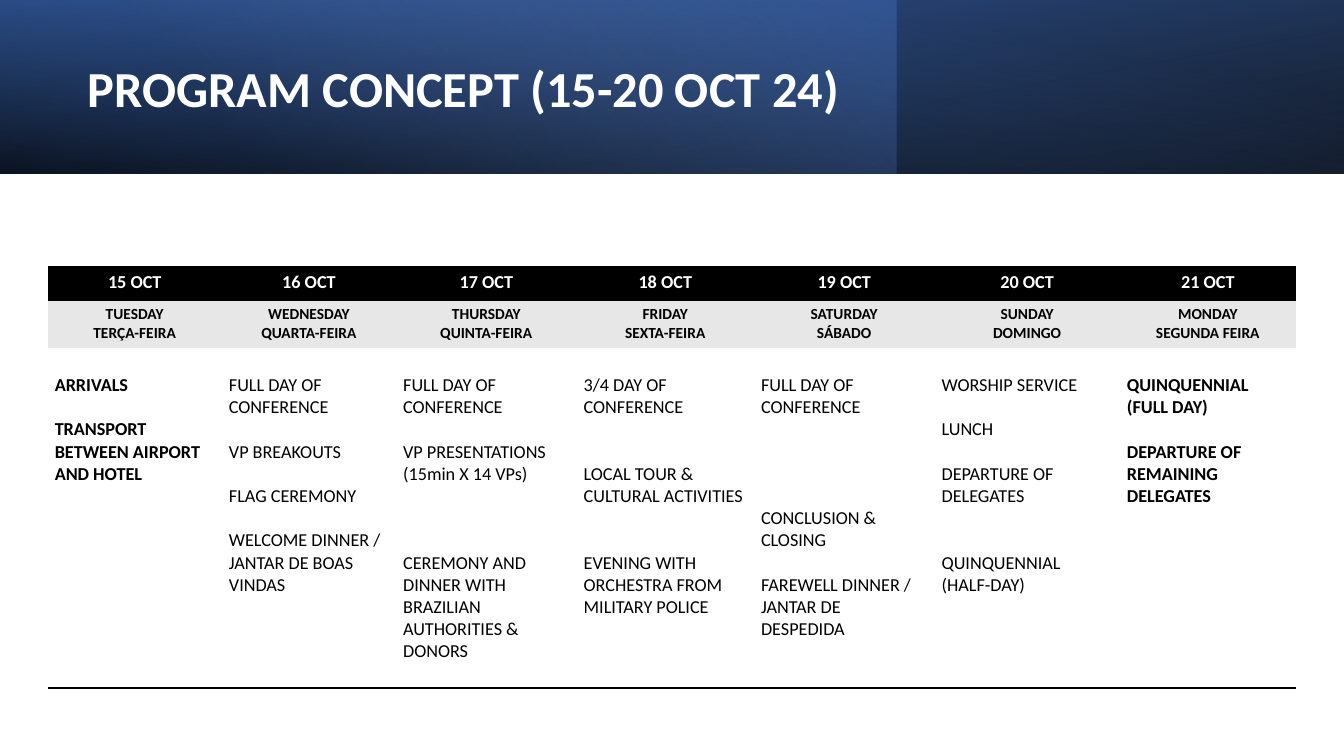
"""Builds the conference program slide: a gradient banner over a day-by-day table."""
import pptx
import pptx.dml.color
import pptx.enum.shapes
import pptx.enum.text
import pptx.oxml.ns
import pptx.util
from lxml import etree

Cm, Pt = pptx.util.Cm, pptx.util.Pt
qn = pptx.oxml.ns.qn
CENTER = pptx.enum.text.PP_ALIGN.CENTER

TITLE = "PROGRAM CONCEPT (15-20 OCT 24)"
FONT = "Calibri"
WIDE, TALL, BAND = 33.87, 19.05, 4.37

# width, angle, turn, flip, stops as (position, colour, opacity)
LAYERS = [
    (WIDE, 100, 180, True, [(0, "000000", 96), (100, "2F5597", 100)]),
    (22.58, 140, 0, False, [(0, "4472C4", 41), (74, "8FAADC", 0)]),
    (WIDE, 260, 0, True, [(0, "000000", 63), (78, "4472C4", 15)]),
]

# width, date, day names, bold, events as (blank lines above, text)
DAYS = [
    (4.39, "15 OCT", "TUESDAY\nTERÇA-FEIRA", True,
     [(0, "ARRIVALS"), (1, "TRANSPORT BETWEEN AIRPORT AND HOTEL")]),
    (4.39, "16 OCT", "WEDNESDAY\nQUARTA-FEIRA", False,
     [(0, "FULL DAY OF CONFERENCE"), (1, "VP BREAKOUTS"), (1, "FLAG CEREMONY"),
      (1, "WELCOME DINNER / JANTAR DE BOAS VINDAS")]),
    (4.55, "17 OCT", "THURSDAY\nQUINTA-FEIRA", False,
     [(0, "FULL DAY OF CONFERENCE"), (1, "VP PRESENTATIONS"), (0, "(15min X 14 VPs)"),
      (3, "CEREMONY AND DINNER WITH BRAZILIAN AUTHORITIES & DONORS")]),
    (4.47, "18 OCT", "FRIDAY\nSEXTA-FEIRA", False,
     [(0, "3/4 DAY OF CONFERENCE"), (2, "LOCAL TOUR & CULTURAL ACTIVITIES"),
      (2, "EVENING WITH ORCHESTRA FROM MILITARY POLICE")]),
    (4.55, "19 OCT", "SATURDAY\nSÁBADO", False,
     [(0, "FULL DAY OF CONFERENCE"), (4, "CONCLUSION & CLOSING"),
      (1, "FAREWELL DINNER / JANTAR DE DESPEDIDA")]),
    (4.67, "20 OCT", "SUNDAY\nDOMINGO", False,
     [(0, "WORSHIP SERVICE"), (1, "LUNCH"), (1, "DEPARTURE OF DELEGATES"),
      (2, "QUINQUENNIAL"), (0, "(HALF-DAY)")]),
    (4.44, "21 OCT", "MONDAY\nSEGUNDA FEIRA", True,
     [(0, "QUINQUENNIAL"), (0, "(FULL DAY)"), (1, "DEPARTURE OF REMAINING DELEGATES")]),
]
ROWS = [0.85, 1.19, 8.56]
LEFT, TOP = 1.2, 6.73
LINE = 15.87
PLAIN = "{2D5ABB26-0587-4C30-8999-92F81FD0307C}"


def rgb(code):
    return pptx.dml.color.RGBColor.from_string(code)


def node(parent, tag, **attrs):
    return etree.SubElement(parent, qn(tag), {k: str(v) for k, v in attrs.items()})


def style(frame, size, color, bold):
    for para in frame.paragraphs:
        for run in para.runs:
            run.font.name, run.font.size, run.font.bold = FONT, Pt(size), bold
            run.font.color.rgb = rgb(color)


def add_layer(slide, width, angle, turn, flip, stops):
    rect = slide.shapes.add_shape(
        pptx.enum.shapes.MSO_SHAPE.RECTANGLE, 0, 0, Cm(width), Cm(BAND))
    rect.shadow.inherit = False
    rect.line.fill.background()
    rect.rotation = turn
    props = rect._element.spPr
    if flip:
        props.find(qn("a:xfrm")).set("flipH", "1")
    grad = node(props, "a:gradFill", rotWithShape=1)
    props.find(qn("a:prstGeom")).addnext(grad)
    steps = node(grad, "a:gsLst")
    for pos, color, alpha in stops:
        tint = node(node(steps, "a:gs", pos=pos * 1000), "a:srgbClr", val=color)
        node(tint, "a:alpha", val=alpha * 1000)
    node(grad, "a:lin", ang=angle * 60000, scaled=0)


def add_title(slide):
    box = slide.shapes.add_textbox(Cm(1.96), Cm(0.69), Cm(19.61), Cm(3.23))
    frame = box.text_frame
    frame.word_wrap = True
    frame.vertical_anchor = pptx.enum.text.MSO_ANCHOR.MIDDLE
    frame.text = TITLE
    frame.paragraphs[0].line_spacing = 0.9
    style(frame, 36, "FFFFFF", True)


def fill_cell(cell, text, size, color, bold, back):
    cell.margin_left = cell.margin_right = Cm(0.18)
    cell.margin_top = cell.margin_bottom = Cm(0.1)
    cell.fill.solid()
    cell.fill.fore_color.rgb = rgb(back)
    cell.text_frame.text = text
    style(cell.text_frame, size, color, bold)


def add_rule(cell, side):
    props = cell._tc.get_or_add_tcPr()
    line = node(props, side, w=Pt(2))
    node(node(line, "a:solidFill"), "a:srgbClr", val="000000")
    props.insert(0, line)


def add_plan(slide):
    width = sum(day[0] for day in DAYS)
    table = slide.shapes.add_table(
        len(ROWS), len(DAYS), Cm(LEFT), Cm(TOP), Cm(width), Cm(sum(ROWS))).table
    table._tbl.tblPr.find(qn("a:tableStyleId")).text = PLAIN
    for row, height in zip(table.rows, ROWS):
        row.height = Cm(height)
    for col, (width, date, names, bold, events) in enumerate(DAYS):
        table.columns[col].width = Cm(width)
        head, day, body = (table.cell(row, col) for row in range(len(ROWS)))
        fill_cell(head, date, 13, "FFFFFF", True, "000000")
        fill_cell(day, names, 11, "000000", True, "E7E7E7")
        text = "\n".join(event for _, event in events)
        fill_cell(body, text, 13, "000000", bold, "FFFFFF")
        for cell in (head, day):
            for para in cell.text_frame.paragraphs:
                para.alignment = CENTER
        body.margin_top = Cm(0.66)
        for para, (gap, _) in zip(body.text_frame.paragraphs, events):
            para.space_before = Pt(gap * LINE)
        add_rule(head, "a:lnT")
        add_rule(body, "a:lnB")


def main():
    deck = pptx.Presentation()
    deck.slide_width, deck.slide_height = Cm(WIDE), Cm(TALL)
    slide = deck.slides.add_slide(deck.slide_layouts[6])
    for layer in LAYERS:
        add_layer(slide, *layer)
    add_title(slide)
    add_plan(slide)
    deck.save("out.pptx")


if __name__ == "__main__":
    main()
